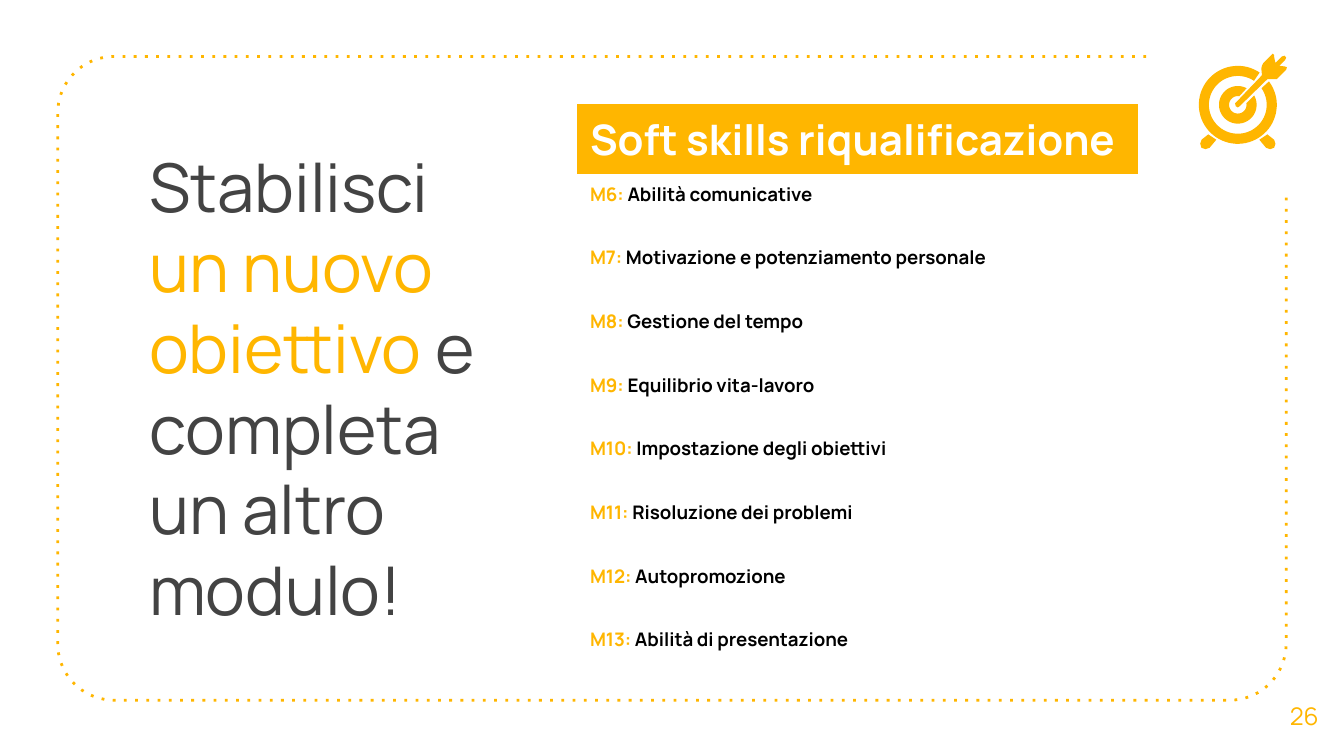
from math import cos, radians, sin

from pptx import Presentation
from pptx.dml.color import RGBColor
from pptx.enum.dml import MSO_LINE
from pptx.enum.text import MSO_ANCHOR, MSO_AUTO_SIZE, PP_ALIGN
from pptx.oxml.ns import qn
from pptx.util import Inches, Pt

GOLD = RGBColor(0xFF, 0xB6, 0x00)
GREY = RGBColor(0x43, 0x43, 0x43)
BLACK = RGBColor(0, 0, 0)
WHITE = RGBColor(0xFF, 0xFF, 0xFF)
FONT = "Manrope"
WIDE = 10
HIGH = WIDE * 9 / 16

TITLE = [("Stabilisci ", GREY), ("un nuovo obiettivo", GOLD),
         (" e completa un altro modulo!", GREY)]
HEAD = "Soft skills riqualificazione"
SKILLS = [
    "Abilità comunicative",
    "Motivazione e potenziamento personale",
    "Gestione del tempo",
    "Equilibrio vita-lavoro",
    "Impostazione degli obiettivi",
    "Risoluzione dei problemi",
    "Autopromozione",
    "Abilità di presentazione",
]
FIRST = 6

# Icon outlines, in hundredths of the icon's unit, from the target's centre
FOOT = [(-22, 22), (-27, 26), (-28, 29), (-27, 32), (-24, 33), (-21, 32),
        (-16, 26), (-19, 24)]
DART = [(26, -38), (25, -37), (19, -31), (18, -29), (17.5, -27), (18, -22),
        (-2, -1), (-1.5, 1), (0, 2), (1.5, 1), (22, -19), (26, -19), (29, -19),
        (30, -20), (36, -26), (36.5, -28), (35, -28.5), (31, -29), (35, -33),
        (36, -35), (35, -36.5), (33, -36), (28, -31), (27, -36), (27, -37)]


def style(obj, **vals):
    for name, val in vals.items():
        setattr(obj, name, val)


def write(para, runs, size, bold=False):
    for text, color in runs:
        run = para.add_run()
        run.text = text
        style(run.font, name=FONT, size=Pt(size), bold=bold)
        run.font.color.rgb = color


def arc(x, y, rad, start, end, step=5):
    """Points in inches, with angles in degrees counted anticlockwise."""
    count = max(2, round(abs(end - start) / step))
    turns = [radians(start + (end - start) * i / count) for i in range(count + 1)]
    return [(x + rad * cos(t), y - rad * sin(t)) for t in turns]


def outline(slide, pts, close=True):
    pts = [(Inches(x), Inches(y)) for x, y in pts]
    pen = slide.shapes.build_freeform(*pts[0], scale=1.0)
    pen.add_line_segments(pts[1:], close=close)
    shape = pen.convert_to_shape()
    shape.shadow.inherit = False
    return shape


def add_frame(slide, box):
    """Dotted border, open at the top right corner for the icon."""
    x, y, w, h = box
    right, low, rad = x + w, y + h, 0.42
    pts = [(x + 0.886 * w, y)]
    pts += arc(x + rad, y + rad, rad, 90, 180)
    pts += arc(x + rad, low - rad, rad, 180, 270)
    pts += arc(right - rad, low - rad, rad, 270, 360)
    pts.append((right, y + 0.217 * h))
    shape = outline(slide, pts, close=False)
    shape.fill.background()
    shape.line.color.rgb = GOLD
    style(shape.line, width=Pt(1.5), dash_style=MSO_LINE.ROUND_DOT)
    for dash in shape._element.iter(qn("a:prstDash")):
        dash.set("val", "dot")


def add_target(slide, box):
    x, y, w, h = box
    unit = w / 66
    mid_x, mid_y = x + 29 * unit, y + 38 * unit

    def ring(outer, inner, gap_out, gap_in):
        out = arc(mid_x, mid_y, outer * unit, gap_out[1], gap_out[0] + 360)
        back = arc(mid_x, mid_y, inner * unit, gap_in[0] + 360, gap_in[1])
        return out + back

    def place(pts, flip=1):
        return [(mid_x + flip * px * unit, mid_y + py * unit) for px, py in pts]

    for pts in (ring(29, 21.5, (37, 56), (35, 56)),
                ring(14, 6.5, (30, 62), (10, 80)),
                place(FOOT), place(FOOT, -1), place(DART)):
        part = outline(slide, pts)
        part.fill.solid()
        part.fill.fore_color.rgb = GOLD
        part.line.fill.background()


def fit(shape, box, anchor, align):
    for name, val in zip(("left", "top", "width", "height"), box):
        setattr(shape, name, Inches(val))
    frame = shape.text_frame
    style(frame, word_wrap=True, auto_size=MSO_AUTO_SIZE.NONE,
          vertical_anchor=anchor)
    for side in ("left", "top", "right", "bottom"):
        setattr(frame, "margin_" + side, Inches(0.1))
    para = frame.paragraphs[0]
    para.alignment = align
    return para


def add_title(slide, box):
    para = fit(slide.shapes.title, box, MSO_ANCHOR.TOP, PP_ALIGN.LEFT)
    write(para, TITLE, 36)


def add_number(slide, box):
    shape = slide.shapes.add_textbox(0, 0, 0, 0)
    para = fit(shape, box, MSO_ANCHOR.MIDDLE, PP_ALIGN.CENTER)
    write(para, [("26", GOLD)], 13)


def add_skills(slide, box):
    rows = len(SKILLS) + 1
    table = slide.shapes.add_table(rows, 1, *map(Inches, box)).table
    style(table, first_row=False, horz_banding=False)
    head = 0.53
    for i, row in enumerate(table.rows):
        row.height = Inches((box[3] - head) / len(SKILLS) if i else head)
        cell = row.cells[0]
        para = cell.text_frame.paragraphs[0]
        if i:
            cell.fill.background()
            code = f"M{FIRST + i - 1}: "
            write(para, [(code, GOLD), (SKILLS[i - 1], BLACK)], 10, True)
        else:
            cell.fill.solid()
            cell.fill.fore_color.rgb = GOLD
            write(para, [(HEAD, WHITE)], 22.5, True)


def main():
    deck = Presentation()
    style(deck, slide_width=Inches(WIDE), slide_height=Inches(HIGH))
    slide = deck.slides.add_slide(deck.slide_layouts[5])
    add_frame(slide, (0.43, 0.42, 9.14, 4.79))
    add_title(slide, (1.01, 0.98, 2.97, 0.94))
    add_number(slide, (WIDE - 0.59, HIGH - 0.6, 0.59, 0.6))
    add_target(slide, (8.92, 0.4, 0.66, 0.71))
    add_skills(slide, (4.29, 0.77, 4.18, 4.32))
    deck.save("out.pptx")


if __name__ == "__main__":
    main()
